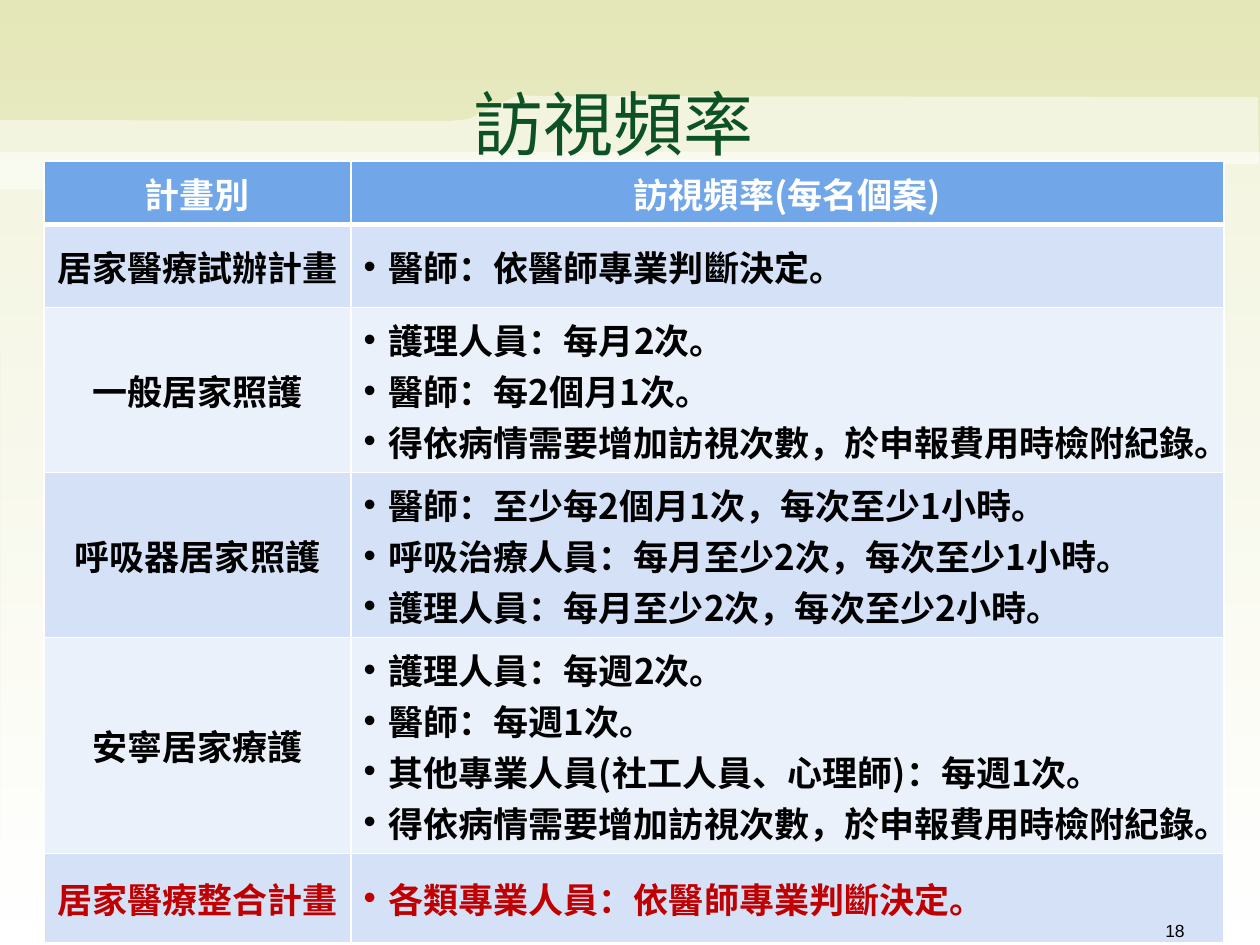
from dataclasses import dataclass

from pptx import Presentation
from pptx.dml.color import RGBColor
from pptx.enum.text import MSO_ANCHOR, PP_ALIGN
from pptx.oxml.ns import qn
from pptx.util import Emu, Pt
from lxml.etree import SubElement

EMU_PER_PX = 914400 / 126


@dataclass(frozen=True)
class Theme:
    heading_font: str = "Noto Sans CJK SC"
    number_font: str = "Arial"
    title_size: int = 40
    table_size: int = 20
    number_size: int = 10
    sky: str = "E4E7B7"
    white: str = "FFFFFF"
    black: str = "000000"
    title: str = "0D5224"
    header: str = "71A7E9"
    bands: tuple[str, str] = ("D5E1F7", "EBF1FB")
    highlight: str = "C00000"


@dataclass(frozen=True)
class Plan:
    name: str
    visits: tuple[str, ...]
    height: int
    color: str


@dataclass(frozen=True)
class Label:
    text: str
    box: tuple[int, int, int, int]
    align: PP_ALIGN
    anchor: MSO_ANCHOR
    style: dict


THEME = Theme()
EXTRA_VISITS = "得依病情需要增加訪視次數，於申報費用時檢附紀錄。"
HEADER_HEIGHT = 59
COLUMN_WIDTHS = (307, 873)
PLANS = (
    Plan("居家醫療試辦計畫", ("醫師：依醫師專業判斷決定。",), 83, THEME.black),
    Plan("一般居家照護",
         ("護理人員：每月2次。", "醫師：每2個月1次。", EXTRA_VISITS), 141, THEME.black),
    Plan("呼吸器居家照護",
         ("醫師：至少每2個月1次，每次至少1小時。",
          "呼吸治療人員：每月至少2次，每次至少1小時。",
          "護理人員：每月至少2次，每次至少2小時。"), 141, THEME.black),
    Plan("安寧居家療護",
         ("護理人員：每週2次。", "醫師：每週1次。",
          "其他專業人員(社工人員、心理師)：每週1次。", EXTRA_VISITS), 183, THEME.black),
    Plan("居家醫療整合計畫", ("各類專業人員：依醫師專業判斷決定。",), 89, THEME.highlight),
)
LABELS = (
    Label("訪視頻率", (461, 76, 333, 93), PP_ALIGN.LEFT, MSO_ANCHOR.MIDDLE,
          {"name": THEME.heading_font, "size": Pt(THEME.title_size), "color": THEME.title}),
    Label("18", (903, 914, 294, 23), PP_ALIGN.RIGHT, MSO_ANCHOR.TOP,
          {"name": THEME.number_font, "size": Pt(THEME.number_size), "color": THEME.black}),
)
LOWER_VEIL = ((1, 944), (1264, 945), (1260, 152), (0, 152))
UPPER_VEIL = ((1258, 97), (537, 96), (521, 95), (514, 97), (476, 115), (469, 119),
              (449, 121), (0, 120), (0, 189), (789, 189), (804, 185), (849, 165),
              (872, 164), (1259, 164))


def px(length: int) -> Emu:
    return Emu(round(length * EMU_PER_PX))


def write(paragraph, text: str, style: dict) -> None:
    run = paragraph.add_run()
    run.text = text
    for attribute, value in style.items():
        if attribute == "color":
            run.font.color.rgb = RGBColor.from_string(value)
        else:
            setattr(run.font, attribute, value)
    SubElement(run.font._element, qn("a:ea"), typeface=style["name"])


def draw_veil(slide, points: tuple) -> None:
    builder = slide.shapes.build_freeform(*points[0], scale=EMU_PER_PX)
    builder.add_line_segments(points[1:], close=True)
    veil = builder.convert_to_shape()
    veil.shadow.inherit = False
    veil.line.fill.background()
    veil.fill.solid()
    veil.fill.fore_color.rgb = RGBColor.from_string(THEME.white)
    tint = veil.element.spPr.find(f"{qn('a:solidFill')}/{qn('a:srgbClr')}")
    SubElement(tint, qn("a:alpha"), val="50000")


def draw_label(slide, label: Label) -> None:
    frame = slide.shapes.add_textbox(*map(px, label.box)).text_frame
    frame.word_wrap = True
    frame.vertical_anchor = label.anchor
    frame.paragraphs[0].alignment = label.align
    write(frame.paragraphs[0], label.text, label.style)


def paint_cell(cell, fill: str, top: int = 1, bottom: int = 1) -> None:
    properties = cell._tc.get_or_add_tcPr()
    for side, width in {"L": 1, "R": 1, "T": top, "B": bottom}.items():
        border = SubElement(properties, qn(f"a:ln{side}"), w=str(Pt(width)))
        SubElement(SubElement(border, qn("a:solidFill")), qn("a:srgbClr"), val=THEME.white)
    cell.fill.solid()
    cell.fill.fore_color.rgb = RGBColor.from_string(fill)


def fill_cell(cell, lines: tuple[str, ...], color: str, bulleted: bool) -> None:
    style = {"name": THEME.heading_font, "size": Pt(THEME.table_size),
             "bold": True, "color": color}
    frame = cell.text_frame
    for index, line in enumerate(lines):
        paragraph = frame.add_paragraph() if index else frame.paragraphs[0]
        if bulleted:
            properties = paragraph._p.get_or_add_pPr()
            properties.set("marL", str(px(25)))
            properties.set("indent", str(px(-25)))
            SubElement(properties, qn("a:buFont"), typeface=THEME.number_font)
            SubElement(properties, qn("a:buChar"), char="•")
        else:
            paragraph.alignment = PP_ALIGN.CENTER
        write(paragraph, line, style)


def draw_table(slide) -> None:
    heights = (HEADER_HEIGHT, *(plan.height for plan in PLANS))
    table = slide.shapes.add_table(
        len(heights), len(COLUMN_WIDTHS), px(44), px(161),
        px(sum(COLUMN_WIDTHS)), px(sum(heights))).table
    for column, width in zip(table.columns, COLUMN_WIDTHS):
        column.width = px(width)
    for row, height in zip(table.rows, heights):
        row.height = px(height)

    # Header row
    for cell, heading in zip(table.rows[0].cells, ("計畫別", "訪視頻率(每名個案)")):
        paint_cell(cell, THEME.header, bottom=3)
        fill_cell(cell, (heading,), THEME.white, bulleted=False)

    # One row per plan, in alternating bands
    for index, plan in enumerate(PLANS):
        for column, lines in enumerate(((plan.name,), plan.visits)):
            cell = table.cell(index + 1, column)
            cell.vertical_anchor = MSO_ANCHOR.MIDDLE
            paint_cell(cell, THEME.bands[index % 2], top=1 if index else 3)
            fill_cell(cell, lines, plan.color, bulleted=column == 1)


def main() -> None:
    deck = Presentation()
    deck.slide_width, deck.slide_height = px(1260), px(945)
    slide = deck.slides.add_slide(deck.slide_layouts[6])

    # Background gradient and translucent veils
    backdrop = slide.background.fill
    backdrop.gradient()
    backdrop.gradient_angle = 270
    for stop, color in zip(backdrop.gradient_stops, (THEME.sky, THEME.white)):
        stop.color.rgb = RGBColor.from_string(color)
    for veil in (LOWER_VEIL, UPPER_VEIL):
        draw_veil(slide, veil)

    # Visit table, then title and page number
    draw_table(slide)
    for label in LABELS:
        draw_label(slide, label)

    deck.save("out.pptx")


if __name__ == "__main__":
    main()
